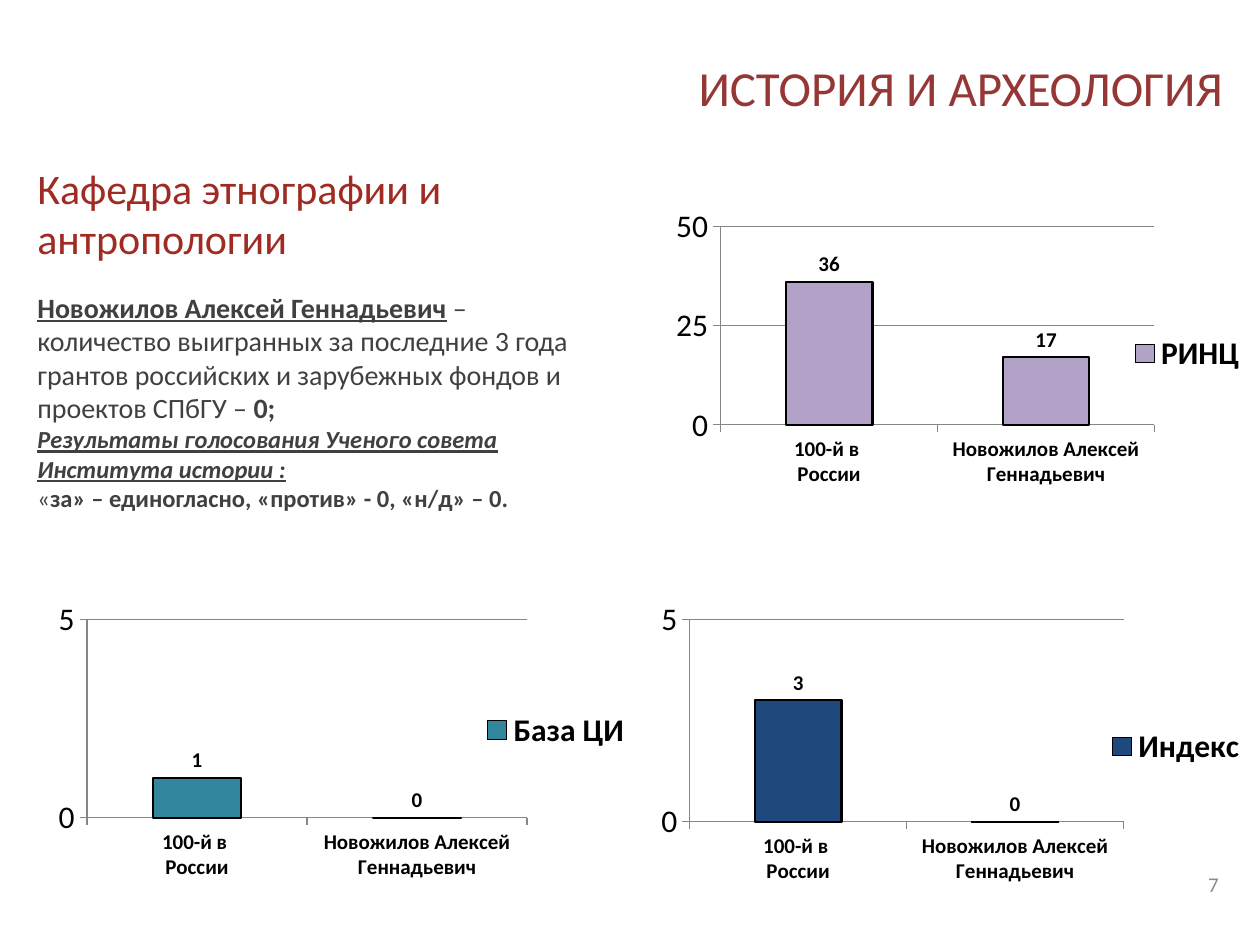
from lxml import etree
from pptx import Presentation
from pptx.chart.data import CategoryChartData
from pptx.dml.color import RGBColor
from pptx.enum.chart import XL_CHART_TYPE as CT, XL_LABEL_POSITION as LP
from pptx.enum.chart import XL_LEGEND_POSITION as LEG, XL_TICK_MARK as TM
from pptx.enum.text import MSO_ANCHOR as MA, PP_ALIGN as PA
from pptx.oxml import parse_xml
from pptx.oxml.ns import nsdecls, qn
from pptx.util import Pt

PX = 914400 / 126
COLORS = {
    "title": "953735", "dept": "9F2B22", "body": "404040", "number": "8C8C8C",
    "black": "000000", "axis": "868686",
    "violet": "B3A2C7", "teal": "31859C", "navy": "1F497D",
}


def set_font(font, color, **values):
    font.name = "Calibri"
    font.color.rgb = RGBColor.from_string(COLORS[color])
    for key, value in values.items():
        setattr(font, key, value)


def px(*lengths):
    return [round(n * PX) for n in lengths]


prs = Presentation()
prs.slide_width, prs.slide_height = px(1260, 945)
s = prs.slides.add_slide(prs.slide_layouts[6])

B = {"bold": True}
texts = [
    ((323, 38, 912, 97), "title", MA.MIDDLE, PA.RIGHT,
     [(28, [("ИСТОРИЯ И АРХЕОЛОГИЯ", {})])]),
    ((25, 155, 536, 115), "dept", MA.MIDDLE, PA.LEFT,
     [(24, [("Кафедра этнографии и антропологии", {})])]),
    ((25, 284, 576, 237), "body", MA.TOP, PA.LEFT, [
        (16, [("Новожилов Алексей Геннадьевич", {"bold": True, "underline": True}),
              (" – количество выигранных за последние 3 года грантов российских "
               "и зарубежных фондов и проектов СПбГУ – ", {}),
              ("0;", B)]),
        (14, [("Результаты голосования Ученого совета Института истории :",
               {"bold": True, "italic": True, "underline": True})]),
        (14, [("«", {}), ("за» – единогласно, «против» - 0, «н/д» – 0.", B)]),
    ]),
    ((937, 859, 294, 50), "number", MA.MIDDLE, PA.RIGHT, [(12, [("7", {})])]),
]

charts = [
    ((640, 548, 620, 397), "Индекс", (3, 0), "navy", 5, 5, (0.08, 0.18, 0.7, 0.51)),
    ((640, 155, 620, 397), "РИНЦ", (36, 17), "violet", 50, 25, (0.13, 0.18, 0.7, 0.5)),
    ((25, 532, 620, 397), "База ЦИ", (1, 0), "teal", 5, 5, (0.1, 0.22, 0.71, 0.5)),
]

for box, name, values, color, top, step, plot_box in charts:
    data = CategoryChartData()
    data.categories = ["100-й в \nРоссии", "Новожилов Алексей Геннадьевич"]
    data.add_series(name, values)
    chart = s.shapes.add_chart(CT.COLUMN_CLUSTERED, *px(*box), data).chart
    chart.has_title = False
    set_font(chart.font, "black", size=Pt(18))

    chart.has_legend = True
    chart.legend.position = LEG.RIGHT
    chart.legend.include_in_layout = False
    set_font(chart.legend.font, "black", size=Pt(18), bold=True)

    cat, val = chart.category_axis, chart.value_axis
    set_font(cat.tick_labels.font, "black", size=Pt(12), bold=True)
    val.minimum_scale, val.maximum_scale, val.major_unit = 0, top, step
    val.has_major_gridlines = True
    for axis in (cat, val):
        axis.major_tick_mark = TM.OUTSIDE
    for line in (cat.format.line, val.format.line, val.major_gridlines.format.line):
        line.color.rgb = RGBColor.from_string(COLORS["axis"])
        line.width = Pt(0.75)

    plot = chart.plots[0]
    plot.gap_width = 150
    plot.vary_by_categories = False
    series = plot.series[0]
    series.invert_if_negative = False
    series.format.fill.solid()
    series.format.fill.fore_color.rgb = RGBColor.from_string(COLORS[color])
    series.format.line.color.rgb = RGBColor.from_string(COLORS["black"])
    series.format.line.width = Pt(1.25)
    labels = series.data_labels
    labels.show_value = True
    labels.position = LP.OUTSIDE_END
    set_font(labels.font, "black", size=Pt(12), bold=True)

    area = chart.element.find(".//" + qn("c:plotArea"))
    for old in area.findall(qn("c:layout")):
        area.remove(old)
    layout = parse_xml(f"<c:layout {nsdecls('c')}><c:manualLayout/></c:layout>")
    settings = [("layoutTarget", "inner"), ("xMode", "edge"), ("yMode", "edge")]
    for tag, value in settings + list(zip("xywh", plot_box)):
        etree.SubElement(layout[0], qn(f"c:{tag}")).set("val", str(value))
    area.insert(0, layout)

for box, color, anchor, align, paragraphs in texts:
    tf = s.shapes.add_textbox(*px(*box)).text_frame
    tf.word_wrap = True
    tf.vertical_anchor = anchor
    for i, (size, runs) in enumerate(paragraphs):
        p = tf.add_paragraph() if i else tf.paragraphs[0]
        p.alignment = align
        for text, style in runs:
            r = p.add_run()
            r.text = text
            set_font(r.font, color, size=Pt(size), **style)

prs.save("out.pptx")
